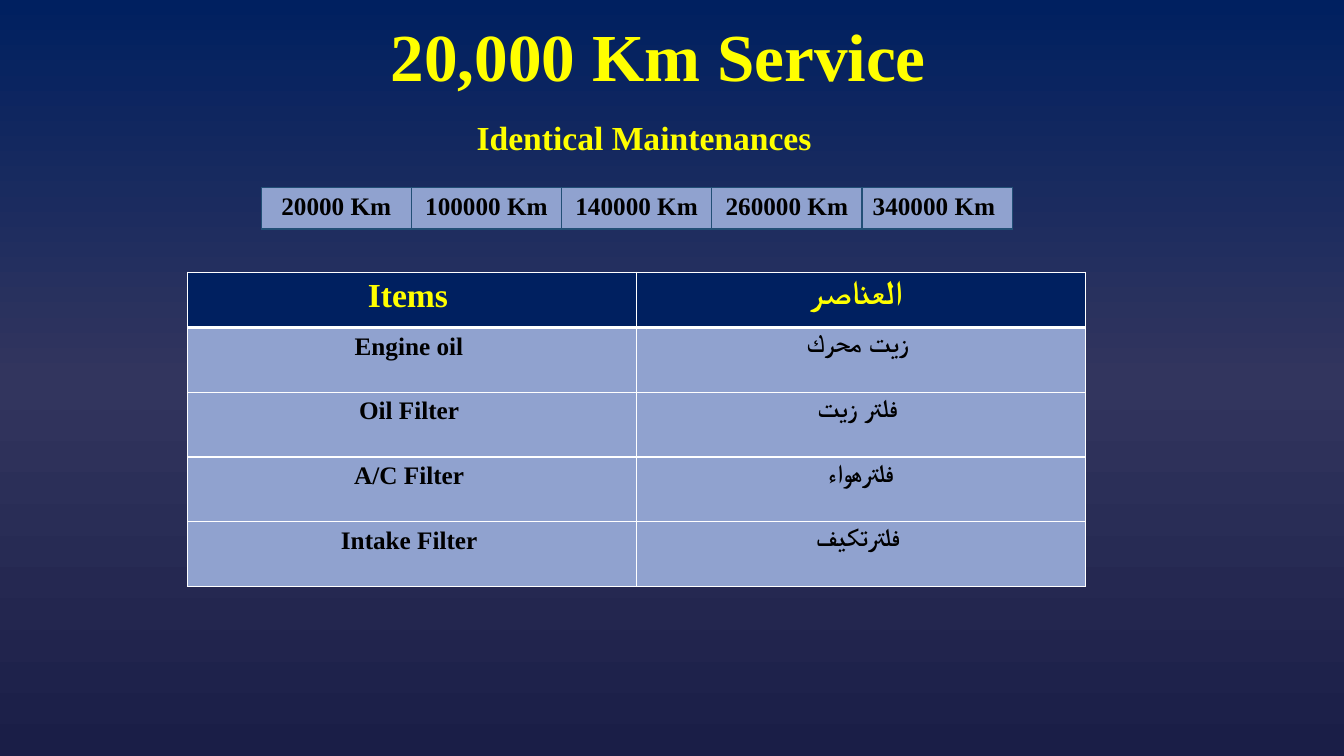
from copy import deepcopy

from pptx import Presentation
from pptx.dml.color import RGBColor
from pptx.enum.text import MSO_ANCHOR, PP_ALIGN
from pptx.oxml import parse_xml
from pptx.oxml.ns import nsdecls, qn
from pptx.util import Inches, Pt

FONT = "Times New Roman"
NAVY = RGBColor(0x00, 0x20, 0x60)
SLATE = RGBColor(0x32, 0x35, 0x5E)
NIGHT = RGBColor(0x1A, 0x1E, 0x47)
YELLOW = RGBColor(0xFF, 0xFF, 0x00)
BLACK = RGBColor(0x00, 0x00, 0x00)
WHITE = RGBColor(0xFF, 0xFF, 0xFF)
PALE = RGBColor(0x90, 0xA2, 0xCF)
STEEL = RGBColor(0x22, 0x4F, 0x76)

ITEMS = [
    ("Items ", "العناصر "),
    ("Engine oil ", "زيت محرك "),
    ("Oil Filter ", "فلتر زيت "),
    ("A/C Filter ", "فلترهواء"),
    ("Intake Filter ", "فلترتكيف "),
]
STOPS = ["20000 Km", "100000 Km", "140000 Km", "260000 Km", "340000 Km "]


def write(frame, text, size=18, color=BLACK, space=None):
    """Put one centred bold line in a text frame."""
    para = frame.paragraphs[0]
    para.alignment = PP_ALIGN.CENTER
    para.line_spacing = space
    run = para.add_run()
    run.text = text
    font = run.font
    font.name, font.size, font.bold = FONT, Pt(size), True
    font.color.rgb = color


def label(slide, box, text, **form):
    shape = slide.shapes.add_textbox(*map(Inches, box))
    frame = shape.text_frame
    frame.word_wrap = True
    frame.vertical_anchor = form.pop("anchor", MSO_ANCHOR.TOP)
    write(frame, text, **form)


def edge(cell, color, base):
    """Draw all four cell borders, with a base line of its own width."""
    props = cell._tc.get_or_add_tcPr()
    for spot, side in enumerate("LRTB"):
        width = Pt(base if side == "B" else 1)
        props.insert(spot, parse_xml(
            f'<a:ln{side} {nsdecls("a")} w="{width}"><a:solidFill>'
            f'<a:srgbClr val="{color}"/></a:solidFill></a:ln{side}>'))


def grid(slide, box, rows, cols):
    """Add a plain table with equal columns and rows."""
    table = slide.shapes.add_table(rows, cols, *map(Inches, box)).table
    table.first_row = table.horz_banding = False
    return table


def style(cell, text, fill, line, base, **form):
    cell.fill.solid()
    cell.fill.fore_color.rgb = fill
    edge(cell, line, base)
    write(cell.text_frame, text, **form)


def strip(slide, box):
    """Row of service distances."""
    table = grid(slide, box, 1, len(STOPS))
    for cell, text in zip(table.iter_cells(), STOPS):
        style(cell, text, PALE, STEEL, 2)


def parts(slide, box, head=0.55):
    """Items in two languages under a dark head row."""
    table = grid(slide, box, len(ITEMS), 2)
    for r, names in enumerate(ITEMS):
        table.rows[r].height = Inches((box[3] - head) / (len(ITEMS) - 1) if r else head)
        for c, text in enumerate(names):
            cell = table.cell(r, c)
            if r:
                style(cell, text, PALE, WHITE, 1)
            else:
                style(cell, text, NAVY, WHITE, 3, size=24, color=YELLOW)


def shade(slide):
    """Three-stop gradient running down the slide."""
    fill = slide.background.fill
    fill.gradient()
    fill.gradient_angle = 270
    stops = slide.element.find(".//" + qn("a:gsLst"))
    stops.append(deepcopy(stops[0]))
    for stop, place, color in zip(fill.gradient_stops, (0, 0.5, 1), (NAVY, SLATE, NIGHT)):
        stop.position = place
        stop.color.rgb = color


def main():
    deck = Presentation()
    deck.slide_width, deck.slide_height = Inches(13.33), Inches(7.5)
    slide = deck.slides.add_slide(deck.slide_layouts[6])
    shade(slide)
    label(slide, (0.78, 0.34, 11.5, 0.51), "20,000 Km Service", size=48,
          color=YELLOW, space=0.9, anchor=MSO_ANCHOR.MIDDLE)
    parts(slide, (1.86, 2.7, 8.91, 3.12))
    label(slide, (3.7, 1.11, 5.46, 0.5), "Identical Maintenances ", size=24, color=YELLOW)
    strip(slide, (2.59, 1.86, 7.45, 0.41))
    deck.save("out.pptx")


if __name__ == "__main__":
    main()
